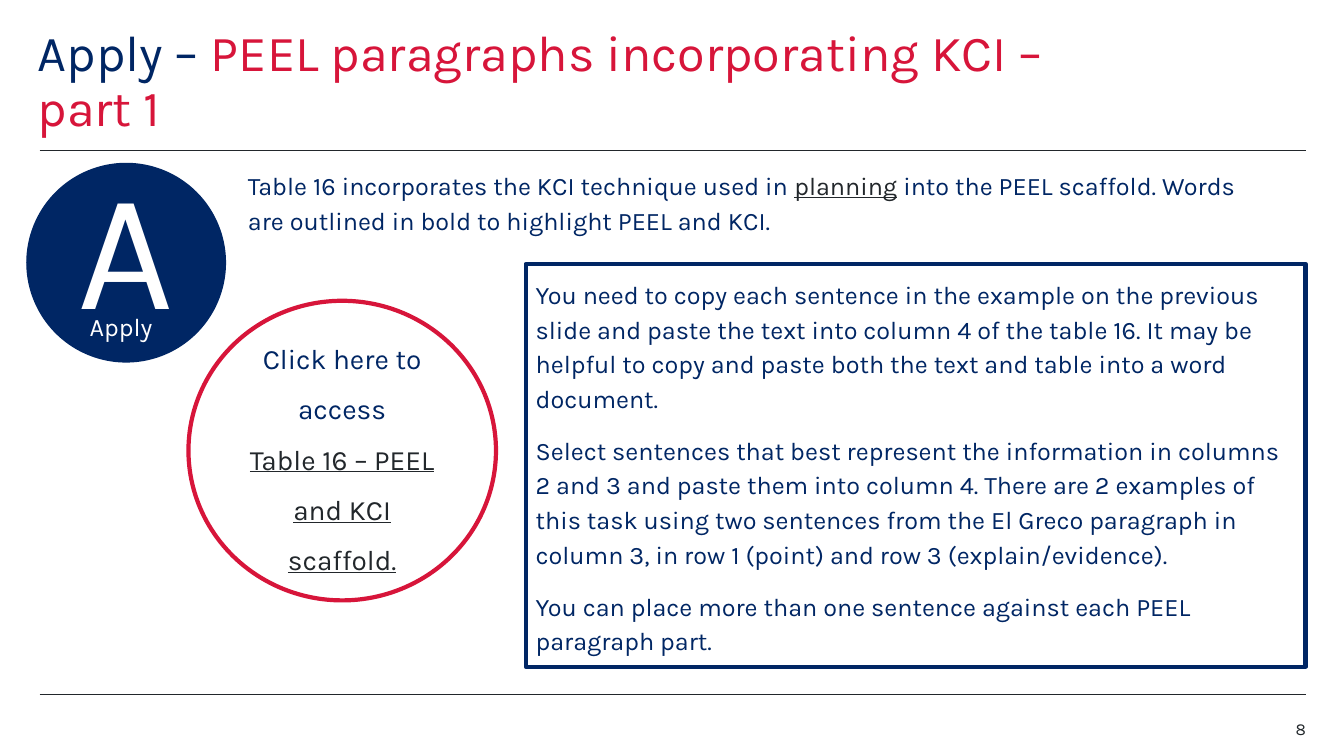
from lxml import etree
from pptx import Presentation
from pptx.dml.color import RGBColor
from pptx.enum.shapes import MSO_CONNECTOR, MSO_SHAPE
from pptx.enum.text import MSO_ANCHOR as ANCHOR, PP_ALIGN as ALIGN
from pptx.oxml.ns import qn
from pptx.util import Cm, Pt

NAVY, RED, INK, WHITE = "002664", "D7153A", "22272B", "FFFFFF"
FONT = "Karla"

# Each paragraph is a list of runs: (text, colour, underlined)
TITLE = [[("Apply – ", NAVY, False),
          ("PEEL paragraphs incorporating KCI – part 1", RED, False)]]
INTRO = [[("Table 16 incorporates the KCI technique used in ", NAVY, False),
          ("planning", INK, True),
          (" into the PEEL scaffold. Words are outlined in bold to highlight PEEL and KCI.",
           NAVY, False)]]
ACCESS = [[("Click here to access", NAVY, False)],
          [("Table 16 – PEEL and KCI scaffold.", INK, True)]]
TASKS = [[(text, NAVY, False)] for text in (
    "You need to copy each sentence in the example on the previous slide and paste the text "
    "into column 4 of the table 16. It may be helpful to copy and paste both the text and "
    "table into a word document.",
    "Select sentences that best represent the information in columns 2 and 3 and paste them "
    "into column 4. There are 2 examples of this task using two sentences from the El Greco "
    "paragraph in column 3, in row 1 (point) and row 3 (explain/evidence).",
    "You can place more than one sentence against each PEEL paragraph part.",
)]
BADGE = [[("A", WHITE, False)]]
BADGE_LABEL = [[("Apply", WHITE, False)]]
PAGE = [[("8", INK, False)]]

RULE_LEFT, RULE_RIGHT = 1, 32.9
RULE_TOPS = (3.8, 17.5)


def rgb(value):
    return RGBColor.from_string(value)


def write(s, paragraphs, size, align=ALIGN.LEFT, spacing=1.0, gap=0,
          anchor=ANCHOR.TOP, inset=None):
    tf = s.text_frame
    tf.word_wrap = True
    tf.vertical_anchor = anchor
    if inset is not None:
        tf.margin_left = tf.margin_top = tf.margin_right = tf.margin_bottom = Cm(inset)
    for i, runs in enumerate(paragraphs):
        p = tf.add_paragraph() if i else tf.paragraphs[0]
        p.alignment = align
        p.line_spacing = spacing
        if i and gap:
            p.space_before = Pt(gap)
        p.font.name = FONT
        p.font.size = Pt(size)
        for text, color, underlined in runs:
            r = p.add_run()
            r.text = text
            r.font.color.rgb = rgb(color)
            if underlined:
                r.font.underline = True


def add_text(slide, box, paragraphs, size, **layout):
    s = slide.shapes.add_textbox(*map(Cm, box))
    write(s, paragraphs, size, **layout)


def add_panel(slide, kind, box, fill, line, width, paragraphs, size, **layout):
    """Add a filled, outlined shape with vertically centred text."""
    s = slide.shapes.add_shape(kind, *map(Cm, box))
    s.shadow.inherit = False
    s.fill.solid()
    s.fill.fore_color.rgb = rgb(fill)
    s.line.color.rgb = rgb(line)
    s.line.width = Pt(width)
    write(s, paragraphs, size, anchor=ANCHOR.MIDDLE, **layout)
    return s


def add_rule(slide, top):
    c = slide.shapes.add_connector(MSO_CONNECTOR.STRAIGHT, Cm(RULE_LEFT), Cm(top),
                                   Cm(RULE_RIGHT), Cm(top))
    c.line.color.rgb = rgb(INK)
    c.line.width = Pt(0.5)
    etree.SubElement(c._element.spPr, qn("a:effectLst"))


def main():
    prs = Presentation()
    prs.slide_width, prs.slide_height = Cm(33.87), Cm(19.05)
    slide = prs.slides.add_slide(prs.slide_layouts[6])

    for top in RULE_TOPS:
        add_rule(slide, top)
    add_text(slide, (0.95, 0.71, 28, 2.8), TITLE, 36, spacing=0.9, inset=0)

    badge = add_panel(slide, MSO_SHAPE.OVAL, (0.68, 4.12, 5, 5), NAVY, NAVY, 1,
                      BADGE, 120, align=ALIGN.CENTER)
    # The deep bottom margin lifts the letter clear of its label
    badge.text_frame.margin_bottom = Cm(1.15)
    add_text(slide, (2.26, 7.85, 1.85, 1.22), BADGE_LABEL, 18, inset=0)

    add_text(slide, (6, 4.06, 25.63, 1.96), INTRO, 18, spacing=1.15)
    add_panel(slide, MSO_SHAPE.OVAL, (4.75, 7.58, 7.75, 7.55), WHITE, RED, 3,
              ACCESS, 20, align=ALIGN.CENTER, spacing=1.5)
    add_panel(slide, MSO_SHAPE.RECTANGLE, (13.25, 6.65, 19.65, 10.15), WHITE, NAVY, 3,
              TASKS, 18, spacing=1.15, gap=12)
    add_text(slide, (30.91, 18.11, 2, 0.51), PAGE, 12, align=ALIGN.RIGHT, inset=0)

    prs.save("out.pptx")


if __name__ == "__main__":
    main()
